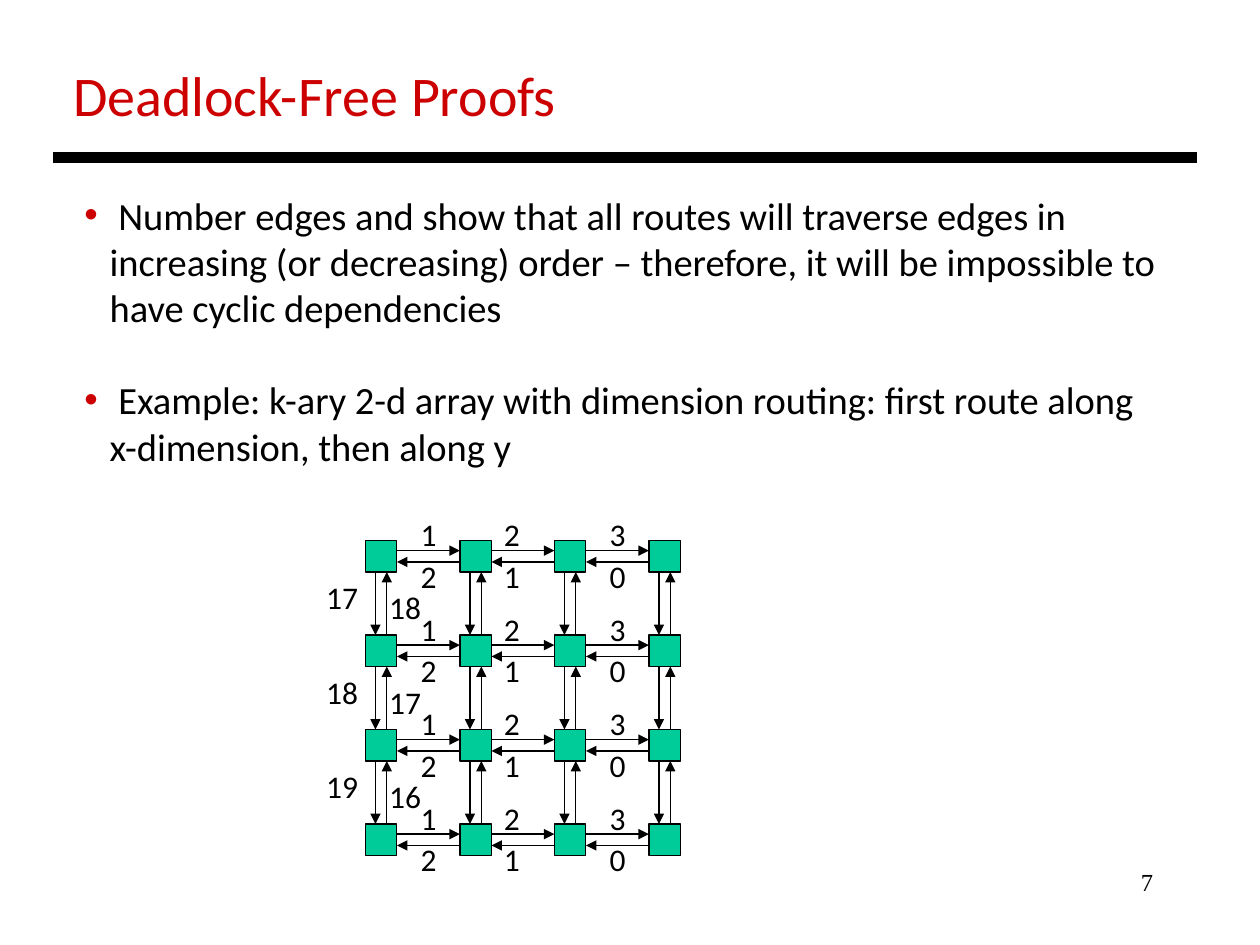
from lxml.etree import SubElement
from pptx import Presentation
from pptx.dml.color import RGBColor
from pptx.enum.shapes import MSO_CONNECTOR as Connector, MSO_SHAPE as Shape
from pptx.enum.text import MSO_ANCHOR as Anchor, MSO_AUTO_SIZE as AutoSize, PP_ALIGN as Align
from pptx.oxml.ns import qn
from pptx.util import Inches, Pt

COLORS = {"title": "CC0000", "text": "000000", "line": "000000", "node": "00CC99"}


def add_line(start, end, width=0.75, arrow=False):
    """Draw a straight line between two points given in inches."""
    line = slide.shapes.add_connector(Connector.STRAIGHT, *map(Inches, start + end))
    line.line.color.rgb = RGBColor.from_string(COLORS["line"])
    line.line.width = Pt(width)
    if arrow:
        SubElement(line.line._get_or_add_ln(), qn("a:tailEnd"), type="triangle")
    SubElement(line._element.spPr, qn("a:effectLst"))


def set_font(paragraph, size, color="text", name="Calibri"):
    paragraph.font.size = Pt(size)
    paragraph.font.name = name
    paragraph.font.color.rgb = RGBColor.from_string(COLORS[color])


presentation = Presentation()
presentation.slide_width, presentation.slide_height = Inches(10), Inches(7.5)
slide = presentation.slides.add_slide(presentation.slide_layouts[1])

# Title and rule
title = slide.shapes.title
title.left, title.top, title.width, title.height = map(Inches, (0.48, 0.43, 4.09, 0.64))
title.text_frame.text = "Deadlock-Free Proofs"
title.text_frame.word_wrap = False
title.text_frame.auto_size = AutoSize.NONE
title.text_frame.vertical_anchor = Anchor.TOP
title.text_frame.paragraphs[0].alignment = Align.LEFT
set_font(title.text_frame.paragraphs[0], 32, "title")
add_line((0.42, 1.25), (9.5, 1.25), width=6)

# Bulleted text
body = slide.placeholders[1]
body.left, body.top, body.width, body.height = map(Inches, (0.57, 1.47, 8.93, 2.32))
body.text_frame.auto_size = AutoSize.NONE
body.text_frame.margin_right = Inches(0.25)
body.text_frame.text = (
    " Number edges and show that all routes will traverse edges in increasing "
    "(or decreasing) order – therefore, it will be impossible to have cyclic dependencies\n"
    " Example: k-ary 2-d array with dimension routing: first route along "
    "x-dimension, then along y"
)
for paragraph, space_before in zip(body.text_frame.paragraphs, (0, 26.5)):
    paragraph.space_before = Pt(space_before)
    properties = paragraph._p.get_or_add_pPr()
    properties.set("marL", str(Inches(0.2)))
    properties.set("indent", str(Inches(-0.2)))
    bullet_color = SubElement(properties, qn("a:buClr"))
    SubElement(bullet_color, qn("a:srgbClr"), val=COLORS["title"])
    SubElement(properties, qn("a:buChar"), char="•")
    set_font(paragraph, 22)

# Mesh: 4 x 4 nodes, a pair of opposite arrows between neighbours
SIZE, NODE, PITCH = 4, 0.25, 0.75
LEFT, TOP = 2.9, 4.29
NEAR, FAR = 0.08, 0.17

for row in range(SIZE):
    for column in range(SIZE):
        x, y = LEFT + column * PITCH, TOP + row * PITCH
        node = slide.shapes.add_shape(Shape.RECTANGLE, *map(Inches, (x, y, NODE, NODE)))
        node.shadow.inherit = False
        node.fill.solid()
        node.fill.fore_color.rgb = RGBColor.from_string(COLORS["node"])
        node.line.color.rgb = RGBColor.from_string(COLORS["line"])
        node.line.width = Pt(0.75)
        if column < SIZE - 1:
            add_line((x + NODE, y + NEAR), (x + PITCH, y + NEAR), arrow=True)
            add_line((x + PITCH, y + FAR), (x + NODE, y + FAR), arrow=True)
        if row < SIZE - 1:
            add_line((x + NEAR, y + NODE), (x + NEAR, y + PITCH), arrow=True)
            add_line((x + FAR, y + PITCH), (x + FAR, y + NODE), arrow=True)

# Edge numbers: text, left, top, width
labels = []
for row in range(SIZE):
    for left, rightward, leftward in ((3.24, "1", "2"), (3.9, "2", "1"), (4.74, "3", "0")):
        labels.append((rightward, left, 4.04 + row * PITCH, 0.34))
        labels.append((leftward, left, 4.37 + row * PITCH, 0.34))
for row, (downward, upward) in enumerate((("17", "18"), ("18", "17"), ("19", "16"))):
    labels.append((downward, 2.49, 4.54 + row * PITCH, 0.46))
    labels.append((upward, 2.99, 4.62 + row * PITCH, 0.46))

for text, left, top, width in labels:
    label = slide.shapes.add_textbox(*map(Inches, (left, top, width, 0.4)))
    label.text_frame.text = text
    label.text_frame.word_wrap = False
    set_font(label.text_frame.paragraphs[0], 18)

# Slide number
number = slide.shapes.add_textbox(*map(Inches, (7.17, 6.83, 2.08, 0.5)))
number.text_frame.text = "7"
number.text_frame.word_wrap = True
number.text_frame.paragraphs[0].alignment = Align.RIGHT
set_font(number.text_frame.paragraphs[0], 14, name="Times New Roman")

presentation.save("out.pptx")
